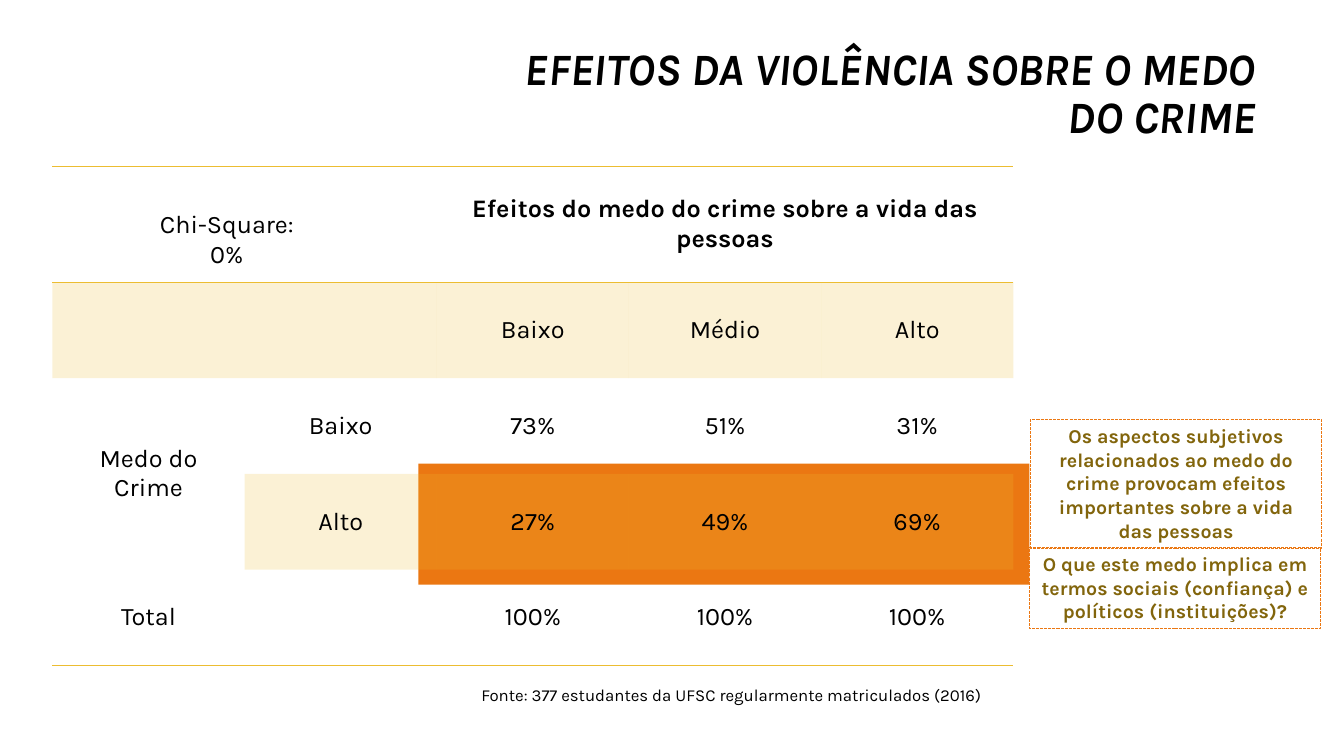
from dataclasses import dataclass

from lxml import etree
from pptx import Presentation
from pptx.dml.color import RGBColor
from pptx.enum.dml import MSO_LINE
from pptx.enum.shapes import MSO_SHAPE
from pptx.enum.text import MSO_ANCHOR, MSO_AUTO_SIZE, PP_ALIGN
from pptx.oxml.ns import qn
from pptx.util import Inches, Pt

RECTANGLE = MSO_SHAPE.RECTANGLE
DASH = MSO_LINE.SQUARE_DOT
CENTER, RIGHT = PP_ALIGN.CENTER, PP_ALIGN.RIGHT
TOP, MIDDLE = MSO_ANCHOR.TOP, MSO_ANCHOR.MIDDLE
NO_FIT = MSO_AUTO_SIZE.NONE

FONT = "Karla"
BLACK, ORANGE, GOLD, BROWN = "000000", "EB7712", "ECBD31", "82650C"
PLAIN_TABLE_STYLE = "{2D5ABB26-0587-4C30-8999-92F81FD0307C}"


@dataclass(frozen=True)
class Box:
    left: float
    top: float
    width: float
    height: float

    def lengths(self) -> tuple:
        return tuple(Inches(v) for v in (self.left, self.top, self.width, self.height))


@dataclass(frozen=True)
class Label:
    text: str
    box: Box
    size: int


@dataclass(frozen=True)
class Entry:
    row: int
    column: int
    text: str
    bold: bool = False


HIGHLIGHT = Box(4.15, 4.6, 6.06, 1.2)
TITLE = Label("EFEITOS DA VIOLÊNCIA SOBRE O MEDO DO CRIME", Box(4.86, 0.24, 7.7, 1.41), 32)
CALLOUTS = [
    Label("Os aspectos subjetivos relacionados ao medo do crime provocam efeitos "
          "importantes sobre a vida das pessoas", Box(10.22, 4.16, 2.89, 1.28), 14),
    Label("O que este medo implica em termos sociais (confiança) e políticos "
          "(instituições)?", Box(10.21, 5.43, 2.89, 0.81), 14),
]
NOTES = [
    Label("Fonte: 377 estudantes da UFSC regularmente matriculados (2016)",
          Box(4.46, 6.74, 5.59, 0.3), 12),
    Label("Chi-Square: 0%", Box(1.31, 2.02, 1.88, 0.7), 18),
]

TABLE_BOX = Box(0.52, 1.65, 9.53, 4.96)
ROW_HEIGHTS = [1.15] + [0.95] * 4
COLUMN_COUNT = 5
MERGES = [((0, 0), (0, 1)), ((0, 2), (0, 4)), ((1, 0), (1, 1)), ((2, 0), (3, 0))]
RULED_SIDES = {0: ("a:lnT", "a:lnB"), 4: ("a:lnB",)}
SHADED_FROM_COLUMN = {1: 0, 3: 1}
PERCENT_ROWS = {2: ("73%", "51%", "31%"), 3: ("27%", "49%", "69%"),
                4: ("100%", "100%", "100%")}
ENTRIES = [
    Entry(0, 2, "Efeitos do medo do crime sobre a vida das pessoas", True),
    *(Entry(1, 2 + i, level) for i, level in enumerate(("Baixo", "Médio", "Alto"))),
    Entry(2, 0, "Medo do Crime"),
    Entry(2, 1, "Baixo"),
    Entry(3, 1, "Alto"),
    Entry(4, 0, "Total"),
    *(Entry(row, 2 + i, percent)
      for row, percents in PERCENT_ROWS.items() for i, percent in enumerate(percents)),
]


def color(value: str) -> RGBColor:
    return RGBColor.from_string(value)


def write(frame, text: str, size: int, ink: str = BLACK, bold: bool = False,
          italic: bool = False, align=CENTER) -> None:
    paragraph = frame.paragraphs[0]
    paragraph.alignment = align
    run = paragraph.add_run()
    run.text = text
    font = run.font
    font.name, font.size, font.bold, font.italic = FONT, Pt(size), bold, italic
    font.color.rgb = color(ink)


def add_title(slide) -> None:
    title = slide.shapes.title
    title.left, title.top, title.width, title.height = TITLE.box.lengths()
    frame = title.text_frame
    frame.auto_size, frame.word_wrap, frame.vertical_anchor = NO_FIT, True, MIDDLE
    write(frame, TITLE.text, TITLE.size, bold=True, italic=True, align=RIGHT)
    frame.paragraphs[0].line_spacing = 0.9


def add_highlight(slide) -> None:
    highlight = slide.shapes.add_shape(RECTANGLE, *HIGHLIGHT.lengths())
    highlight.shadow.inherit = False
    highlight.fill.solid()
    highlight.fill.fore_color.rgb = color(ORANGE)
    highlight.line.fill.background()


def add_callout(group, label: Label) -> None:
    callout = group.shapes.add_shape(RECTANGLE, *label.box.lengths())
    callout.shadow.inherit = False
    callout.fill.background()
    callout.line.color.rgb = color(ORANGE)
    callout.line.width = Pt(0.75)
    callout.line.dash_style = DASH
    frame = callout.text_frame
    frame.word_wrap, frame.vertical_anchor = True, TOP
    write(frame, label.text, label.size, BROWN, bold=True)


def add_note(slide, label: Label) -> None:
    frame = slide.shapes.add_textbox(*label.box.lengths()).text_frame
    frame.word_wrap = True
    write(frame, label.text, label.size)


def rule(cell, side: str) -> None:
    line = etree.SubElement(cell._tc.get_or_add_tcPr(), qn(side), w=str(Pt(1)))
    fill = etree.SubElement(line, qn("a:solidFill"))
    etree.SubElement(fill, qn("a:srgbClr"), val=GOLD)


def shade(cell) -> None:
    cell.fill.solid()
    cell.fill.fore_color.rgb = color(GOLD)
    tint = cell._tc.tcPr.find(qn("a:solidFill")).find(qn("a:srgbClr"))
    etree.SubElement(tint, qn("a:alpha"), val="20000")


def add_fear_table(slide) -> None:
    table = slide.shapes.add_table(len(ROW_HEIGHTS), COLUMN_COUNT,
                                   *TABLE_BOX.lengths()).table
    table.first_row = table.horz_banding = False
    table._tbl.tblPr.find(qn("a:tableStyleId")).text = PLAIN_TABLE_STYLE
    for column in table.columns:
        column.width = Inches(TABLE_BOX.width / COLUMN_COUNT)
    for row_index, height in enumerate(ROW_HEIGHTS):
        table.rows[row_index].height = Inches(height)
        for column_index in range(COLUMN_COUNT):
            cell = table.cell(row_index, column_index)
            for side in RULED_SIDES.get(row_index, ()):
                rule(cell, side)
            if column_index >= SHADED_FROM_COLUMN.get(row_index, COLUMN_COUNT):
                shade(cell)
            else:
                cell.fill.background()
    for first, last in MERGES:
        table.cell(*first).merge(table.cell(*last))
    for entry in ENTRIES:
        cell = table.cell(entry.row, entry.column)
        cell.vertical_anchor = MIDDLE
        if entry.row in (2, 3) and entry.column >= 2:
            cell.margin_left = cell.margin_top = cell.margin_right = Inches(0.01)
            cell.margin_bottom = Inches(0)
        write(cell.text_frame, entry.text, 18, bold=entry.bold)


def main() -> None:
    presentation = Presentation()
    presentation.slide_width, presentation.slide_height = Inches(13.33), Inches(7.5)
    slide = presentation.slides.add_slide(presentation.slide_layouts[5])
    add_title(slide)
    add_highlight(slide)
    callout_group = slide.shapes.add_group_shape()
    for label in CALLOUTS:
        add_callout(callout_group, label)
    add_fear_table(slide)
    for label in NOTES:
        add_note(slide, label)
    presentation.save("out.pptx")


if __name__ == "__main__":
    main()
